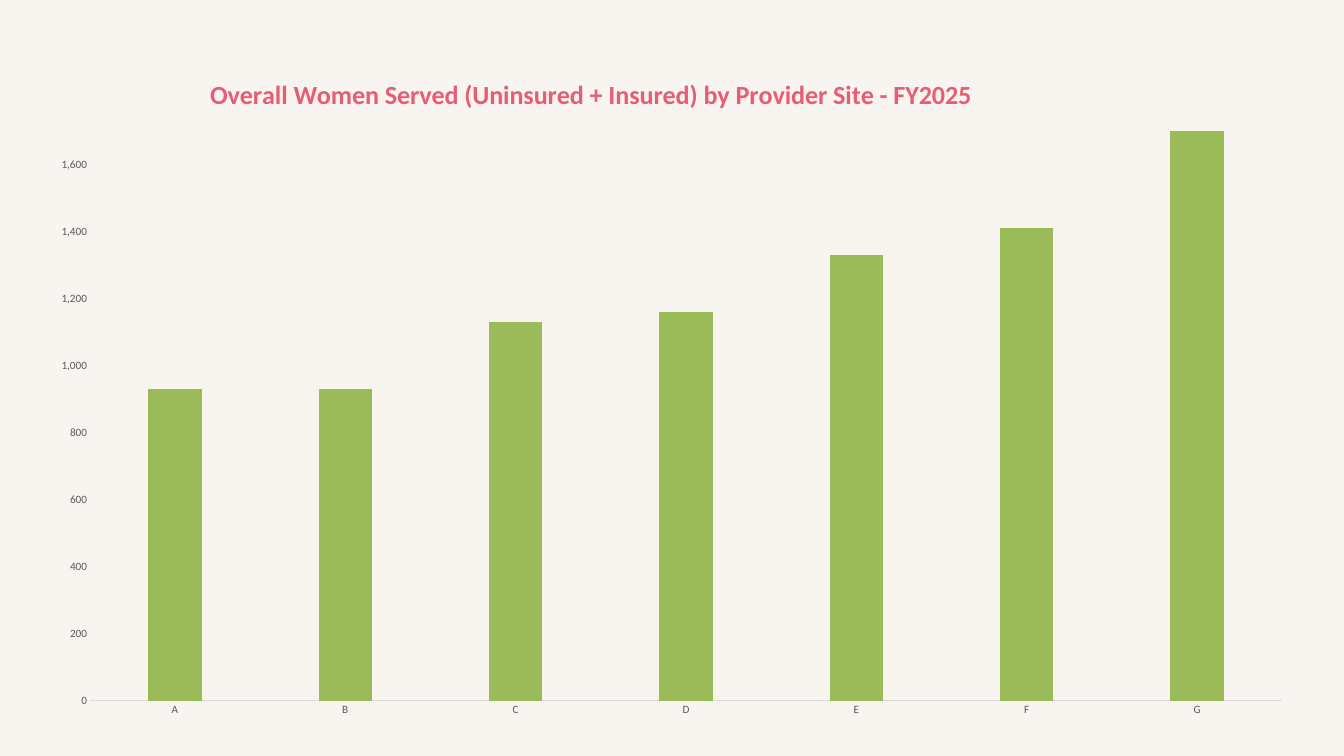
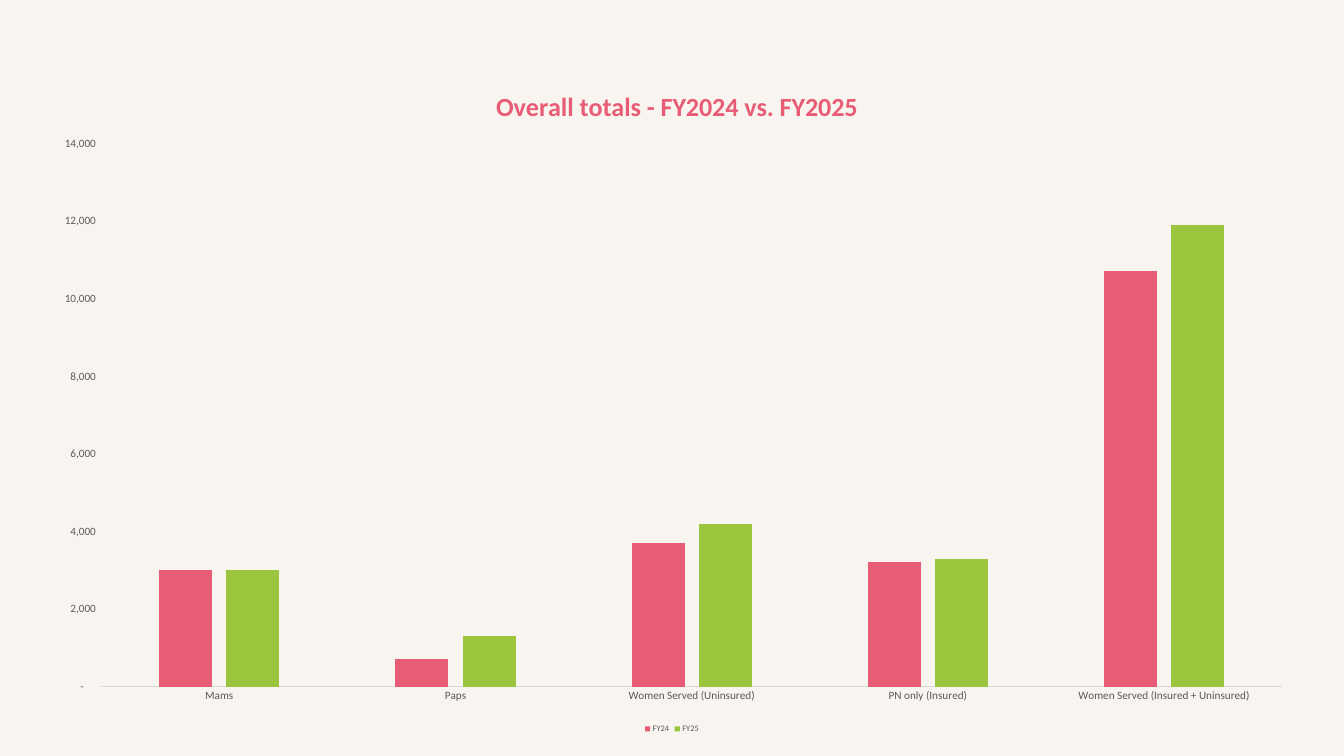
from pptx import Presentation
from pptx.chart.data import CategoryChartData
from pptx.dml.color import RGBColor
from pptx.enum.chart import XL_CHART_TYPE, XL_LEGEND_POSITION, XL_TICK_MARK
from pptx.oxml import parse_xml
from pptx.oxml.ns import nsdecls, qn
from pptx.util import Inches, Pt

FONT = "Calibri"
CREAM, ROSE, GREEN, OLIVE = "F8F5F0", "E85D75", "9BC53D", "9BBB59"
GREY, RULE, BLACK = "595959", "D9D9D9", "000000"
WIDTH, HEIGHT = 20, 11.25
CHART_W, CHART_H = 18.92, 10.08

# title_at and plot_at are percentages of the chart's width and height
CHARTS = [
    dict(
        title="Overall Women Served (Uninsured + Insured) by Provider Site - FY2025",
        top=0.79, title_at=(13.3, 2.8), plot_at=(4.2, 11.5, 93.8, 84.1),
        categories=list("ABCDEFG"),
        series=[("Series 1", OLIVE, (930, 930, 1130, 1160, 1330, 1410, 2190))],
        number_format="#,##0", scale=(0, 1700, 200), legend=False,
    ),
    dict(
        title="Overall totals - FY2024 vs. FY2025",
        top=0.88, title_at=(35.8, 3.7), plot_at=(5.1, 12.45, 92.9, 80.2),
        categories=["Mams", "Paps", "Women Served (Uninsured)",
                    "PN only (Insured)", "Women Served (Insured + Uninsured)"],
        series=[("FY24", ROSE, (3000, 700, 3700, 3200, 10700)),
                ("FY25", GREEN, (3000, 1300, 4200, 3300, 11900))],
        number_format='_(* #,##0_);_(* \\(#,##0\\);_(* "-"??_);_(',
        scale=(0, 14000, 2000), legend=True,
    ),
]


def rgb(value):
    return RGBColor.from_string(value)


def style_font(font, size, color, bold=False):
    font.name, font.size, font.bold = FONT, Pt(size), bold
    font.color.rgb = rgb(color)


def place(element, index, percents, inner=False):
    """Give a chart part a fixed position, and a size if four percents come."""
    for old in element.findall(qn("c:layout")):
        element.remove(old)
    target = '<c:layoutTarget val="inner"/>' if inner else ""
    keys = "xywh"[:len(percents)]
    modes = "".join(f'<c:{k}Mode val="edge"/>' for k in keys if k in "xy")
    values = "".join(f'<c:{k} val="{v / 100:.4f}"/>' for k, v in zip(keys, percents))
    element.insert(index, parse_xml(
        f'<c:layout {nsdecls("c")}><c:manualLayout>{target}{modes}{values}'
        "</c:manualLayout></c:layout>"))


def style_axis(axis):
    axis.has_major_gridlines = False
    axis.major_tick_mark = axis.minor_tick_mark = XL_TICK_MARK.NONE
    style_font(axis.tick_labels.font, 12, GREY)


def add_column_chart(slide, item):
    data = CategoryChartData()
    data.categories = item["categories"]
    for name, _, values in item["series"]:
        data.add_series(name, values)
    chart = slide.shapes.add_chart(
        XL_CHART_TYPE.COLUMN_CLUSTERED, Inches((WIDTH - CHART_W) / 2),
        Inches(item["top"]), Inches(CHART_W), Inches(CHART_H), data).chart
    style_font(chart.font, 10, BLACK)

    chart.has_title = True
    title = chart.chart_title
    title.include_in_layout = False
    p = title.text_frame.paragraphs[0]
    p.text = item["title"]
    style_font(p.runs[0].font, 28, ROSE, bold=True)
    place(title._element, 1, item["title_at"])

    plot = chart.plots[0]
    plot.gap_width, plot.overlap, plot.vary_by_categories = 219, -27, False
    for series, (_, color, _) in zip(plot.series, item["series"]):
        series.format.fill.solid()
        series.format.fill.fore_color.rgb = rgb(color)
    place(chart._chartSpace.chart.plotArea, 0, item["plot_at"], inner=True)

    category, value = chart.category_axis, chart.value_axis
    style_axis(category)
    category.format.line.color.rgb = rgb(RULE)
    category.format.line.width = Pt(0.75)
    style_axis(value)
    value.format.line.fill.background()
    value.minimum_scale, value.maximum_scale, value.major_unit = item["scale"]
    value.tick_labels.number_format = item["number_format"]
    value.tick_labels.number_format_is_linked = False

    chart.has_legend = item["legend"]
    if chart.has_legend:
        chart.legend.position = XL_LEGEND_POSITION.BOTTOM
        chart.legend.include_in_layout = False
        style_font(chart.legend.font, 9, GREY)


def main():
    prs = Presentation()
    prs.slide_width, prs.slide_height = Inches(WIDTH), Inches(HEIGHT)
    background = prs.slide_master.background.fill
    background.solid()
    background.fore_color.rgb = rgb(CREAM)
    for item in CHARTS:
        add_column_chart(prs.slides.add_slide(prs.slide_layouts[6]), item)
    prs.save("out.pptx")


if __name__ == "__main__":
    main()
